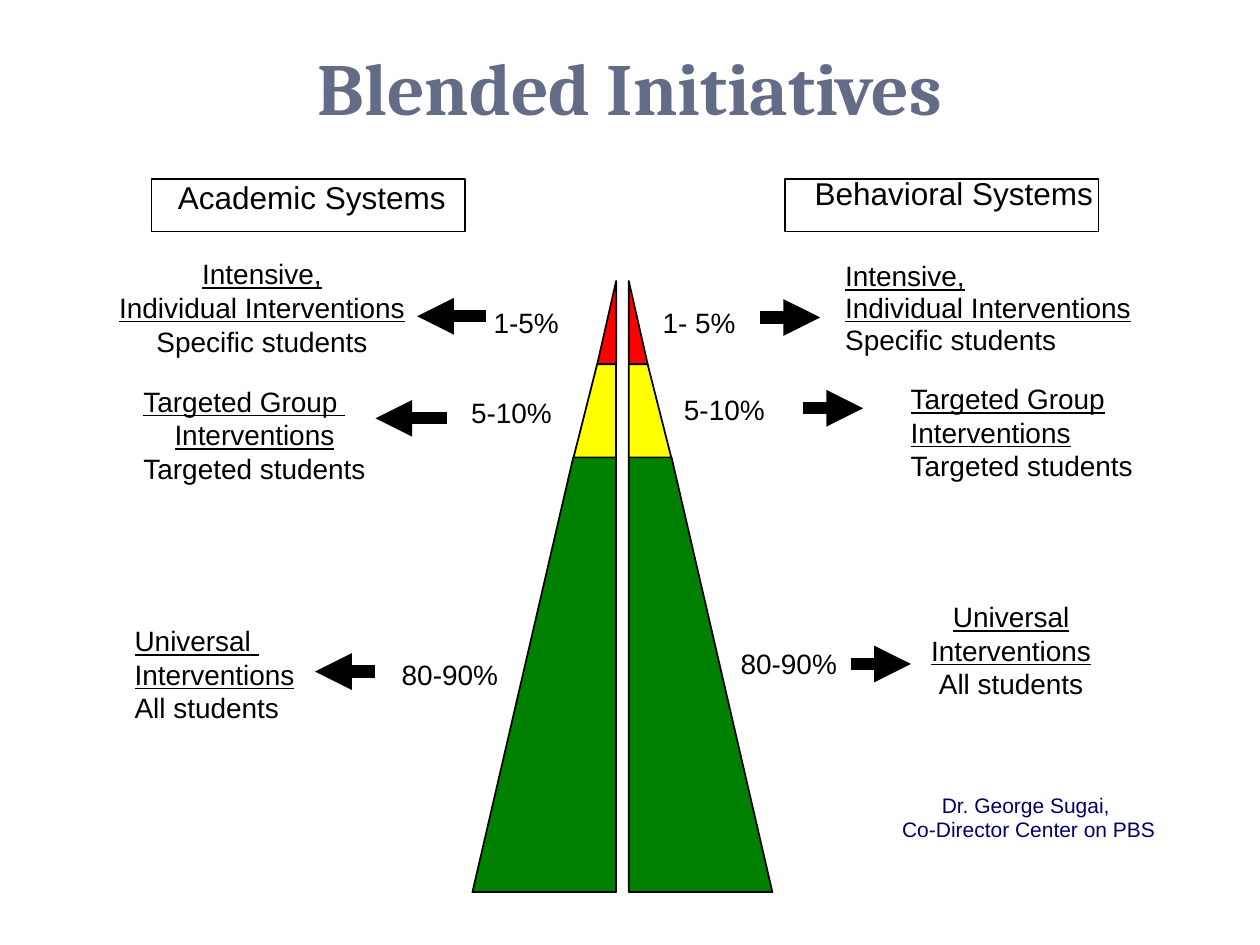
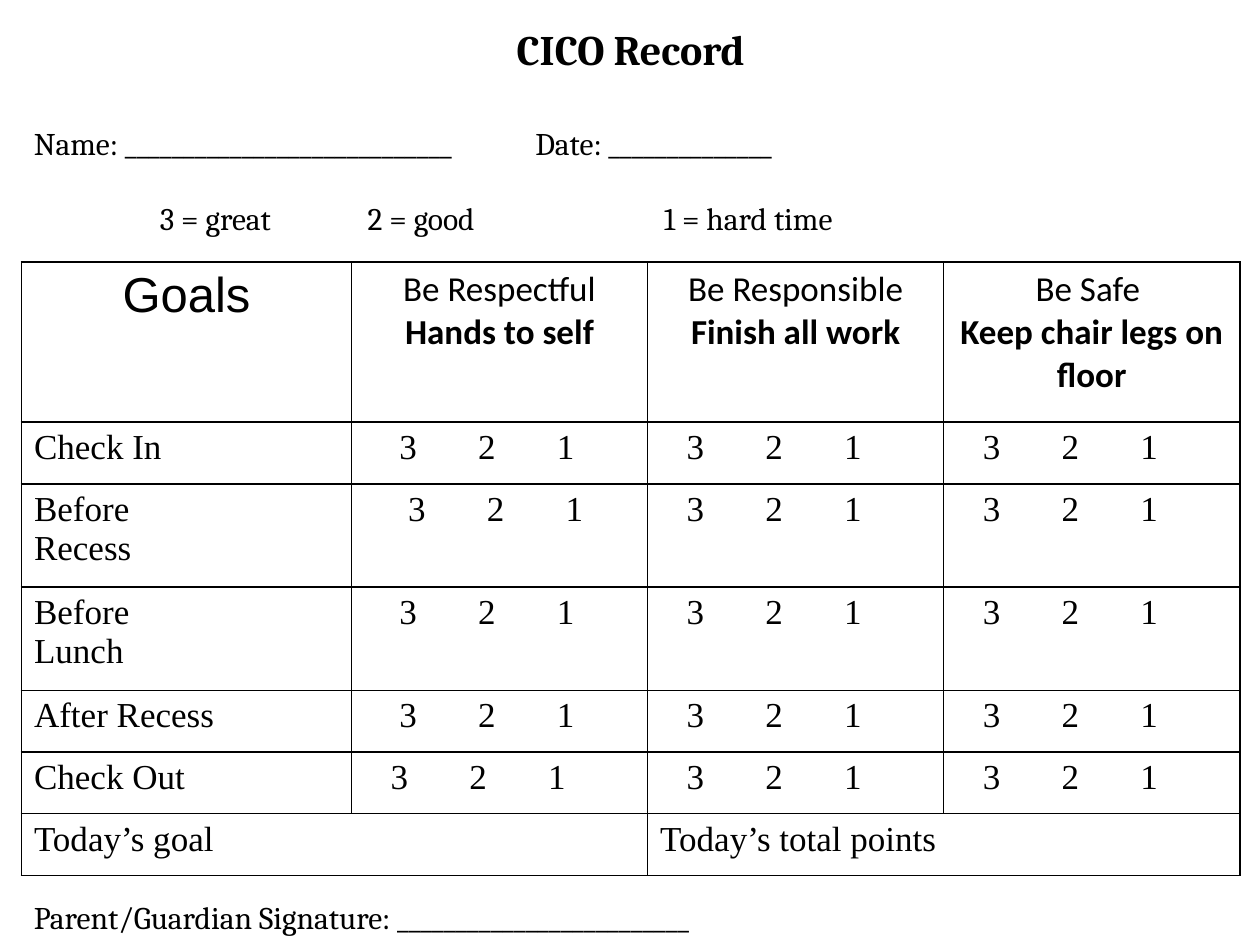
from itertools import cycle

from lxml.etree import SubElement
from pptx import Presentation
from pptx.dml.color import RGBColor
from pptx.enum.shapes import MSO_CONNECTOR, MSO_SHAPE
from pptx.enum.text import MSO_ANCHOR, PP_ALIGN
from pptx.oxml.ns import qn
from pptx.util import Pt

SCALE = 9144
COLORS = {
    "ink": "000000",
    "title": "646B86",
    "credit": "000066",
    "intensive": "FF0000",
    "targeted": "FFFF00",
    "universal": "008000",
}
ALIGNMENTS = {"l": PP_ALIGN.LEFT, "c": PP_ALIGN.CENTER}


def px(*lengths):
    return [round(length * SCALE) for length in lengths]


def rgb(name):
    return RGBColor.from_string(COLORS[name])


class Deck:
    """Builds slides in one shared style, working on the current slide."""

    def __init__(self):
        self.presentation = Presentation()
        self.presentation.slide_width, self.presentation.slide_height = px(1000, 750)
        self.slide = None

    def new_slide(self):
        self.slide = self.presentation.slides.add_slide(self.presentation.slide_layouts[6])

    def set_lines(self, frame, lines, size=16, font="Arial", color="ink", align="l",
                  bold=False, underlined=0, tabs=()):
        frame.text = "\n".join(lines)
        for index, (paragraph, letter) in enumerate(zip(frame.paragraphs, cycle(align))):
            paragraph.alignment = ALIGNMENTS[letter]
            for run in paragraph.runs:
                run.font.name = font
                run.font.size = Pt(size)
                run.font.bold = bold
                run.font.underline = index < underlined
                run.font.color.rgb = rgb(color)
            if tabs:
                self.set_tabs(paragraph, tabs)
        return frame.paragraphs

    def set_tabs(self, paragraph, tabs):
        tab_list = SubElement(paragraph._p.get_or_add_pPr(), qn("a:tabLst"))
        for position in px(*tabs):
            SubElement(tab_list, qn("a:tab"), pos=str(position), algn="l")

    def text(self, box, lines, anchor=MSO_ANCHOR.TOP, wrap=True, **style):
        frame = self.slide.shapes.add_textbox(*px(*box)).text_frame
        frame.word_wrap = wrap
        frame.vertical_anchor = anchor
        return self.set_lines(frame, lines, **style)

    def tight_text(self, box, lines, gap, **style):
        paragraphs = self.text(box, lines, **style)
        for index, paragraph in enumerate(paragraphs):
            paragraph.line_spacing = 0.5
            paragraph.space_before = Pt(gap if index else 0)

    def outline(self, shape, width):
        shape.shadow.inherit = False
        shape.line.color.rgb = rgb("ink")
        shape.line.width = Pt(width)

    def frame(self, box):
        shape = self.slide.shapes.add_shape(MSO_SHAPE.RECTANGLE, *px(*box))
        shape.fill.background()
        self.outline(shape, 0.75)

    def polygon(self, points, color):
        builder = self.slide.shapes.build_freeform(*points[0], scale=SCALE)
        builder.add_line_segments(points[1:], close=True)
        shape = builder.convert_to_shape()
        shape.fill.solid()
        shape.fill.fore_color.rgb = rgb(color)
        self.outline(shape, 1)

    def arrow(self, start, tip, y):
        connector = self.slide.shapes.add_connector(
            MSO_CONNECTOR.STRAIGHT, *px(start, y, tip, y))
        connector.line.color.rgb = rgb("ink")
        connector.line.width = Pt(7)
        SubElement(connector.line._get_or_add_ln(), qn("a:tailEnd"), type="triangle")
        SubElement(connector._element.spPr, qn("a:effectLst"))

    def table(self, box, widths, heights):
        table = self.slide.shapes.add_table(len(heights), len(widths), *px(*box)).table
        table.first_row = table.horz_banding = False
        for column, width in zip(table.columns, px(*widths)):
            column.width = width
        for row, height in zip(table.rows, px(*heights)):
            row.height = height
        for cell in table.iter_cells():
            self.border(cell)
            cell.fill.background()
        return table

    def border(self, cell):
        properties = cell._tc.get_or_add_tcPr()
        for side in ("L", "R", "T", "B"):
            line = SubElement(properties, qn(f"a:ln{side}"), w=str(Pt(1)))
            fill = SubElement(line, qn("a:solidFill"))
            SubElement(fill, qn("a:srgbClr"), val=COLORS["ink"])


def add_blended_initiatives(deck):
    deck.new_slide()
    deck.text((75, 33, 850, 75), ["Blended Initiatives"], MSO_ANCHOR.BOTTOM,
              size=42, font="Cambria", color="title", align="c", bold=True)

    deck.text((107, 138, 281, 37), ["Academic Systems"], MSO_ANCHOR.MIDDLE,
              size=18, align="c")
    deck.text((627, 133, 260, 55), ["Behavioral Systems"], size=18, align="c")
    for left in (120, 623):
        deck.frame((left, 142, 249, 42))

    tiers = [
        ("intensive", 223, 289, 0, 15),
        ("targeted", 289, 364, 15, 34),
        ("universal", 363, 708, 34, 114),
    ]
    for inner, direction in ((489, -1), (499, 1)):
        for color, top, bottom, top_width, bottom_width in tiers:
            deck.polygon([
                (inner, top),
                (inner + direction * top_width, top),
                (inner + direction * bottom_width, bottom),
                (inner, bottom),
            ], color)

    for start, tip, y in [(386, 331, 251), (355, 298, 332), (298, 250, 533),
                          (603, 651, 252), (637, 685, 324), (675, 723, 527)]:
        deck.arrow(start, tip, y)

    for left, top, width, share in [
        (382, 238, 73, "1-5%"), (364, 309, 85, "5-10%"), (309, 517, 97, "80-90%"),
        (516, 238, 78, "1- 5%"), (533, 307, 85, "5-10%"), (578, 508, 97, "80-90%"),
    ]:
        deck.text((left, top, width, 37), [share], wrap=False)

    intensive = ["Intensive,", "Individual Interventions", "Specific students"]
    deck.text((83, 199, 250, 91), intensive, wrap=False, align="c", underlined=2)
    deck.text((104, 300, 199, 91), ["Targeted Group ", "Interventions", "Targeted students"],
              wrap=False, align="lcl", underlined=2)
    deck.text((97, 490, 149, 91), ["Universal ", "Interventions", "All students"],
              wrap=False, underlined=2)
    deck.tight_text((661, 212, 254, 79), intensive, 8.5, underlined=2)
    deck.text((713, 298, 197, 91), ["Targeted Group Interventions", "Targeted students"],
              underlined=1)
    deck.text((709, 471, 187, 91), ["Universal Interventions", "All students"],
              align="c", underlined=1)
    deck.tight_text((675, 633, 283, 42), ["Dr. George Sugai, ", "Co-Director Center on PBS"],
                    6.25, size=12, color="credit", align="c")


def add_cico_record(deck):
    deck.new_slide()
    form = {"size": 18, "font": "Cambria"}
    heading, name_line, scale_line = deck.text((17, 14, 967, 210), [
        "CICO Record",
        f"Name: {'_' * 28}\tDate: {'_' * 14}",
        "\t3 = great\t2 = good\t1 = hard time",
    ], align="cll", **form)
    heading.runs[0].font.size = Pt(24)
    heading.runs[0].font.bold = True
    deck.set_tabs(name_line, [398])
    deck.set_tabs(scale_line, [100, 265, 500])
    name_line.space_before = Pt(28.5)
    scale_line.space_before = Pt(21.5)

    table = deck.table((17, 208, 967, 489), [262, 235, 235, 235],
                       [127, 49, 82, 82, 49, 49, 49])
    deck.set_lines(table.cell(0, 0).text_frame, ["Goals"], size=28, align="c")
    goals = [("Be Respectful", "Hands to self"), ("Be Responsible", "Finish all work"),
             ("Be Safe ", "Keep chair legs on floor")]
    for column, goal in enumerate(goals, 1):
        paragraphs = deck.set_lines(table.cell(0, column).text_frame, goal,
                                    size=20, font="Calibri", align="c")
        paragraphs[1].runs[0].font.bold = True

    entry = {"size": 20, "font": "Times New Roman"}
    times = [(["Check In"], 28), (["Before", "Recess"], 35), (["Before", "Lunch"], 28),
             (["After Recess"], 28), (["Check Out"], 21)]
    for row, (label, first_indent) in enumerate(times, 1):
        deck.set_lines(table.cell(row, 0).text_frame, label, **entry)
        for column, indent in enumerate((first_indent, 21, 21), 1):
            tabs = [indent + 62.5 * step for step in range(3)]
            deck.set_lines(table.cell(row, column).text_frame, ["\t3\t2\t1"],
                           tabs=tabs, **entry)

    for column, label in ((0, "Today’s goal"), (2, "Today’s total points")):
        table.cell(6, column).merge(table.cell(6, column + 1))
        deck.set_lines(table.cell(6, column).text_frame, [label], **entry)

    deck.text((17, 708, 967, 40), [f"Parent/Guardian Signature: {'_' * 25}"], **form)


def main():
    deck = Deck()
    add_blended_initiatives(deck)
    add_cico_record(deck)
    deck.presentation.save("out.pptx")


if __name__ == "__main__":
    main()
